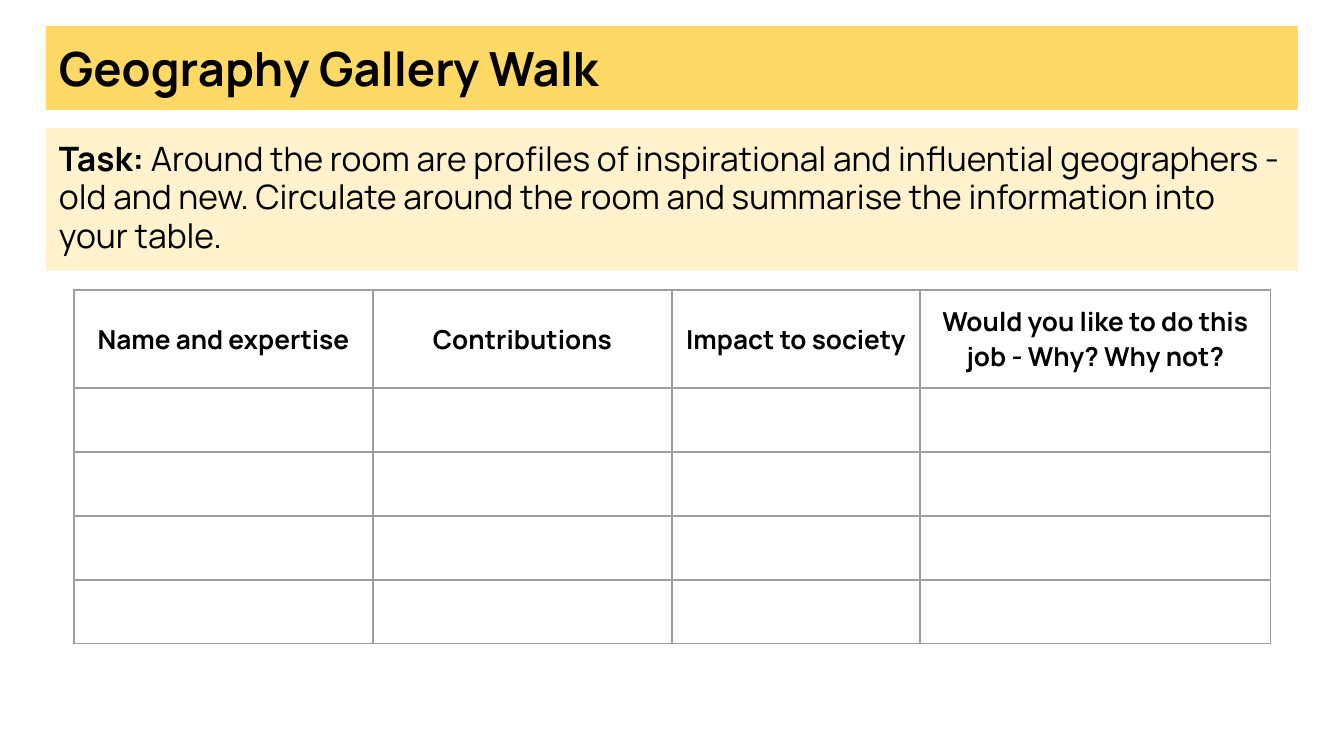
from dataclasses import dataclass
from typing import NamedTuple

from lxml.etree import SubElement
from pptx import Presentation
from pptx.dml.color import RGBColor
from pptx.enum.shapes import MSO_SHAPE
from pptx.enum.text import MSO_ANCHOR as Anchor, PP_ALIGN as Align
from pptx.oxml.ns import qn
from pptx.util import Pt

EMU_PER_PX = 9144000 / 1344


def px(length: int) -> int:
    return round(length * EMU_PER_PX)


@dataclass(frozen=True)
class Theme:
    font: str = "Manrope"
    text: str = "000000"
    title_fill: str = "FFD966"
    task_fill: str = "FFF2CC"
    grid: str = "9E9E9E"
    grid_width: float = 0.75
    title_size: float = 25.2
    task_size: float = 18
    header_size: float = 14
    inset: int = 13


THEME = Theme()


class Run(NamedTuple):
    text: str
    bold: bool = True


class Panel(NamedTuple):
    top: int
    height: int
    fill: str
    runs: list[Run]
    size: float
    anchor: Anchor
    line_spacing: float = 1.0
    space_after: float = 0


class Column(NamedTuple):
    heading: str
    width: int


PANEL_LEFT, PANEL_WIDTH = 46, 1252
PANELS = [
    Panel(26, 84, THEME.title_fill, [Run("Geography Gallery Walk")],
          THEME.title_size, Anchor.MIDDLE),
    Panel(128, 143, THEME.task_fill,
          [Run("Task: "),
           Run("Around the room are profiles of inspirational and influential "
               "geographers - old and new. Circulate around the room and "
               "summarise the information into your table.", bold=False)],
          THEME.task_size, Anchor.TOP, line_spacing=0.95, space_after=12),
]

TABLE_LEFT, TABLE_TOP = 74, 290
COLUMNS = [
    Column("Name and expertise", 299),
    Column("Contributions", 299),
    Column("Impact to society", 248),
    Column("Would you like to do this job - Why? Why not?", 351),
]
ROW_HEIGHTS = [98] + [64] * 4


def write_text(text_frame, runs: list[Run], *, size: float, align=Align.LEFT,
               line_spacing: float = 1.0, space_after: float = 0) -> None:
    text_frame.word_wrap = True
    paragraph = text_frame.paragraphs[0]
    paragraph.alignment = align
    paragraph.line_spacing = line_spacing
    paragraph.space_after = Pt(space_after)
    for text, bold in runs:
        run = paragraph.add_run()
        run.text = text
        run.font.name = THEME.font
        run.font.size = Pt(size)
        run.font.bold = bold
        run.font.color.rgb = RGBColor.from_string(THEME.text)


def set_insets(container) -> None:
    """Give a text frame or table cell the same margin on all sides."""
    for side in ("left", "top", "right", "bottom"):
        setattr(container, f"margin_{side}", px(THEME.inset))


def draw_panel(slide, panel: Panel) -> None:
    shape = slide.shapes.add_shape(
        MSO_SHAPE.RECTANGLE, px(PANEL_LEFT), px(panel.top),
        px(PANEL_WIDTH), px(panel.height))
    shape.shadow.inherit = False
    shape.fill.solid()
    shape.fill.fore_color.rgb = RGBColor.from_string(panel.fill)
    shape.line.fill.background()
    text_frame = shape.text_frame
    set_insets(text_frame)
    text_frame.vertical_anchor = panel.anchor
    write_text(text_frame, panel.runs, size=panel.size,
               line_spacing=panel.line_spacing, space_after=panel.space_after)


def draw_borders(cell) -> None:
    properties = cell._tc.get_or_add_tcPr()
    for tag in ("a:lnL", "a:lnR", "a:lnT", "a:lnB"):
        line = SubElement(properties, qn(tag), w=str(Pt(THEME.grid_width)))
        fill = SubElement(line, qn("a:solidFill"))
        SubElement(fill, qn("a:srgbClr"), val=THEME.grid)


def draw_table(slide) -> None:
    table = slide.shapes.add_table(
        len(ROW_HEIGHTS), len(COLUMNS), px(TABLE_LEFT), px(TABLE_TOP),
        px(sum(column.width for column in COLUMNS)), px(sum(ROW_HEIGHTS))).table
    table.first_row = table.horz_banding = False
    for row, height in zip(table.rows, ROW_HEIGHTS):
        row.height = px(height)
    for cell in table.iter_cells():
        draw_borders(cell)
        cell.fill.background()
    for index, column in enumerate(COLUMNS):
        table.columns[index].width = px(column.width)
        cell = table.cell(0, index)
        set_insets(cell)
        cell.vertical_anchor = Anchor.MIDDLE
        write_text(cell.text_frame, [Run(column.heading)],
                   size=THEME.header_size, align=Align.CENTER)


def main() -> None:
    presentation = Presentation()
    presentation.slide_width, presentation.slide_height = px(1344), px(756)
    slide = presentation.slides.add_slide(presentation.slide_layouts[6])
    for panel in PANELS:
        draw_panel(slide, panel)
    draw_table(slide)
    presentation.save("out.pptx")


if __name__ == "__main__":
    main()
